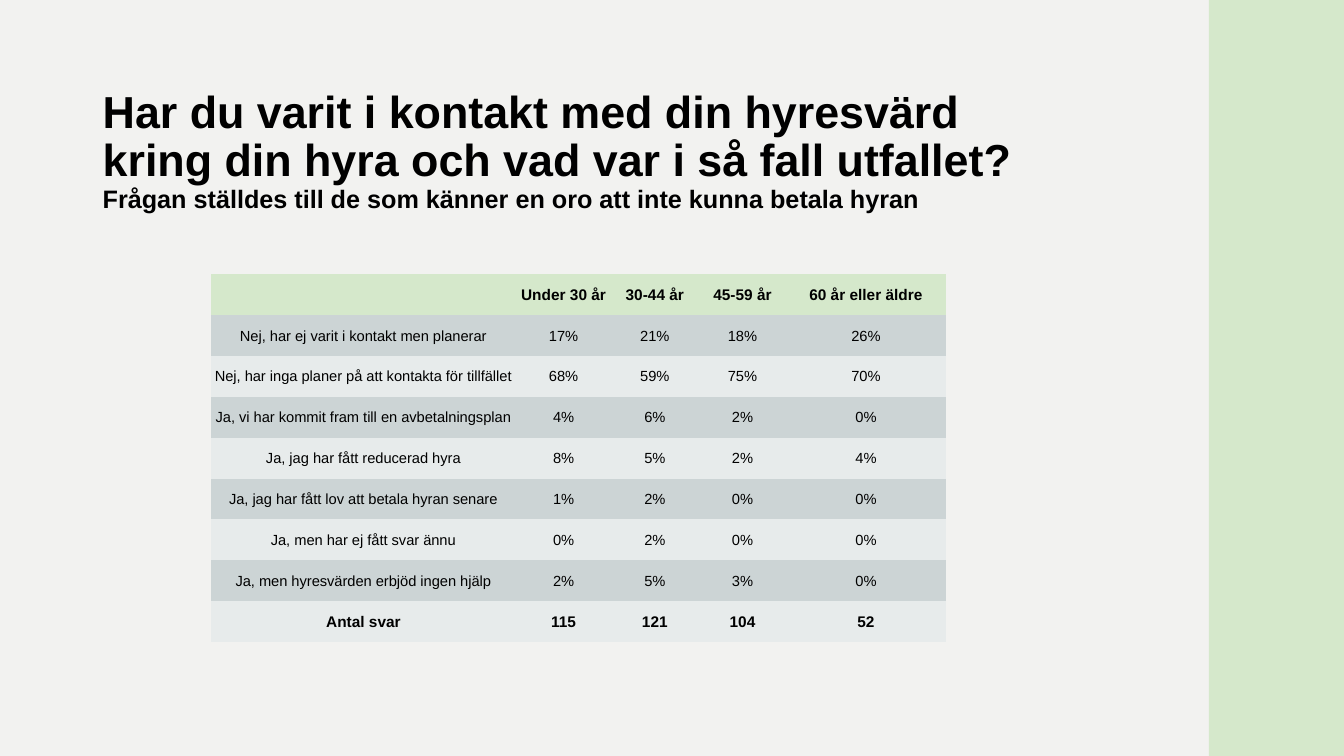
from pptx import Presentation
from pptx.dml.color import RGBColor
from pptx.enum.shapes import MSO_SHAPE
from pptx.enum.text import MSO_ANCHOR, PP_ALIGN
from pptx.oxml.ns import qn
from pptx.util import Inches, Pt

COLORS = {
    "background": "F2F2F0",
    "green": "D5E8CB",
    "dark_band": "CCD4D5",
    "light_band": "E7EBEB",
    "text": "000000",
}
FONT = "Arial"
PLAIN_TABLE_STYLE = "{2D5ABB26-0587-4C30-8999-92F81FD0307C}"

TITLE = "Har du varit i kontakt med din hyresvärd kring din hyra och vad var i så fall utfallet?"
SUBTITLE = "Frågan ställdes till de som känner en oro att inte kunna betala hyran"
COLUMN_WIDTHS = [3.03, 0.94, 0.87, 0.87, 1.58]
ROWS = [
    ["", "Under 30 år", "30-44 år", "45-59 år", "60 år eller äldre"],
    ["Nej, har ej varit i kontakt men planerar", "17%", "21%", "18%", "26%"],
    ["Nej, har inga planer på att kontakta för tillfället", "68%", "59%", "75%", "70%"],
    ["Ja, vi har kommit fram till en avbetalningsplan", "4%", "6%", "2%", "0%"],
    ["Ja, jag har fått reducerad hyra", "8%", "5%", "2%", "4%"],
    ["Ja, jag har fått lov att betala hyran senare", "1%", "2%", "0%", "0%"],
    ["Ja, men har ej fått svar ännu", "0%", "2%", "0%", "0%"],
    ["Ja, men hyresvärden erbjöd ingen hjälp", "2%", "5%", "3%", "0%"],
    ["Antal svar", "115", "121", "104", "52"],
]


def color(name):
    return RGBColor.from_string(COLORS[name])


def style_font(font, size, bold):
    font.name = FONT
    font.size = Pt(size)
    font.bold = bold
    font.color.rgb = color("text")


def add_side_band(slide, left, top, width, height):
    band = slide.shapes.add_shape(
        MSO_SHAPE.RECTANGLE, Inches(left), Inches(top), Inches(width), Inches(height))
    band.shadow.inherit = False
    band.fill.solid()
    band.fill.fore_color.rgb = color("green")
    band.line.fill.background()


def add_title(slide, left, top, width, height):
    box = slide.shapes.add_textbox(Inches(left), Inches(top), Inches(width), Inches(height))
    frame = box.text_frame
    frame.word_wrap = True
    frame.vertical_anchor = MSO_ANCHOR.MIDDLE
    paragraph = frame.paragraphs[0]
    paragraph.line_spacing = 0.9
    title = paragraph.add_run()
    title.text = TITLE
    style_font(title.font, 32, True)
    paragraph.add_line_break()
    subtitle = paragraph.add_run()
    subtitle.text = SUBTITLE
    style_font(subtitle.font, 18, True)


def fill_cell(cell, text, fill, size, bold):
    cell.fill.solid()
    cell.fill.fore_color.rgb = color(fill)
    cell.vertical_anchor = MSO_ANCHOR.MIDDLE
    cell.margin_left = cell.margin_right = cell.margin_top = Inches(0.01)
    cell.margin_bottom = 0
    paragraph = cell.text_frame.paragraphs[0]
    paragraph.alignment = PP_ALIGN.CENTER
    style_font(paragraph.font, size, bold)
    if text:
        paragraph.add_run().text = text


def add_answer_table(slide, left, top, width, height):
    frame = slide.shapes.add_table(
        len(ROWS), len(COLUMN_WIDTHS),
        Inches(left), Inches(top), Inches(width), Inches(height))
    table = frame.table
    table._tbl.tblPr.find(qn("a:tableStyleId")).text = PLAIN_TABLE_STYLE
    for column, column_width in zip(table.columns, COLUMN_WIDTHS):
        column.width = Inches(column_width)
    last = len(ROWS) - 1
    for row_index, texts in enumerate(ROWS):
        if row_index == 0:
            fill = "green"
        else:
            fill = "dark_band" if row_index % 2 else "light_band"
        bold = row_index in (0, last)
        size = 11 if bold else 10.5
        for column_index, text in enumerate(texts):
            fill_cell(table.cell(row_index, column_index), text, fill, size, bold)


def main():
    presentation = Presentation()
    presentation.slide_width = Inches(13.33)
    presentation.slide_height = Inches(7.5)
    slide = presentation.slides.add_slide(presentation.slide_layouts[6])
    slide.background.fill.solid()
    slide.background.fill.fore_color.rgb = color("background")
    add_side_band(slide, 11.99, -0.14, 1.35, 7.64)
    add_title(slide, 0.92, 1.16, 9.64, 0.69)
    add_answer_table(slide, 2.09, 2.72, sum(COLUMN_WIDTHS), 3.65)
    presentation.save("out.pptx")


if __name__ == "__main__":
    main()
